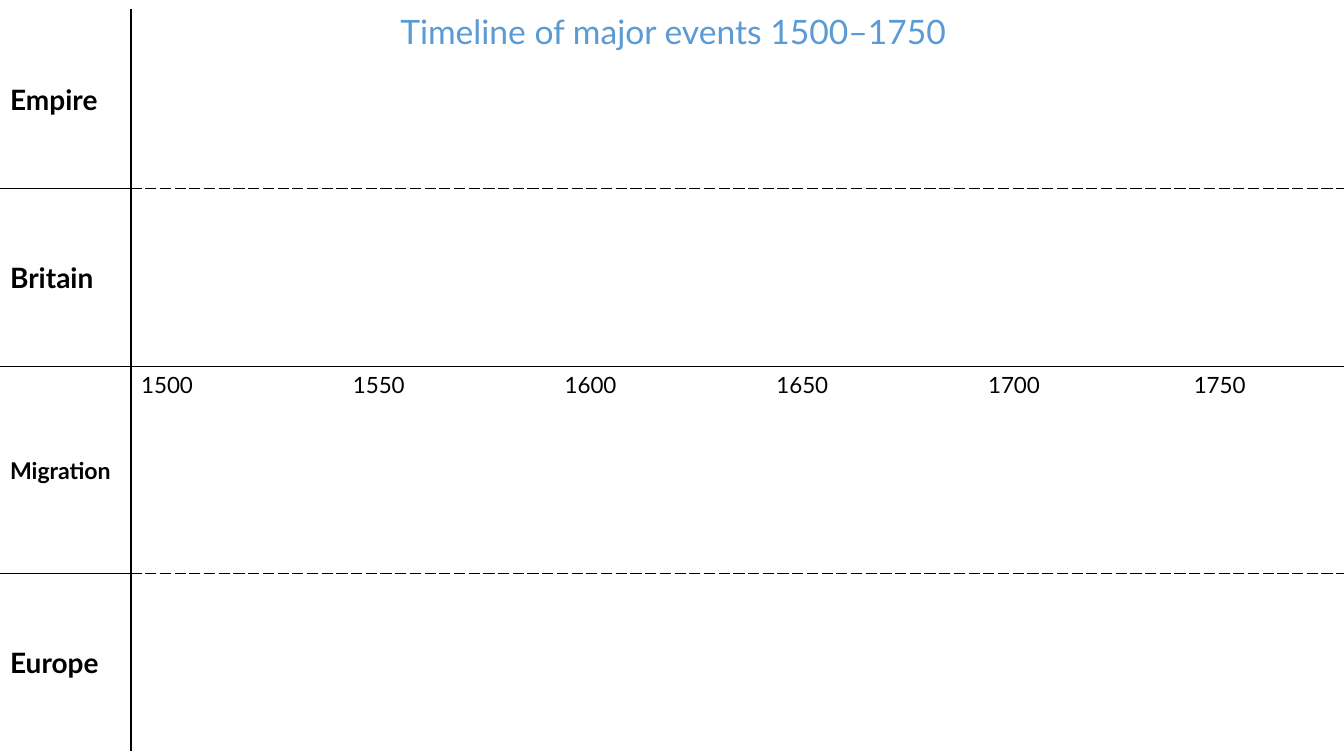
import pptx
import pptx.dml.color
import pptx.enum.text
import pptx.oxml
import pptx.oxml.ns
import pptx.util
from pptx.util import Inches

TITLE = "Timeline of major events 1500–1750"
ROWS = [
    ("Empire", 20, 1.77, "dash"),
    ("Britain", 20, 1.77, "solid"),
    ("Migration", 16.5, 2.05, "dash"),
    ("Europe", 20, 1.77, None),
]
YEARS = ["1500", "1550", "1600", "1650", "1700", "1750"]
YEAR_TABS = [2.1, 4.2, 6.3, 8.4, 10.44]
YEAR_ROW = 2
COLUMN_WIDTHS = [1.3, 12.03]

FONT = "Lato"
BLACK = pptx.dml.color.RGBColor(0x00, 0x00, 0x00)
WHITE = pptx.dml.color.RGBColor(0xFF, 0xFF, 0xFF)
BLUE = pptx.dml.color.RGBColor(0x5B, 0x9B, 0xD5)
MIDDLE = pptx.enum.text.MSO_ANCHOR.MIDDLE


def add_span(para, text, size, color, bold=False):
    span = para.add_run()
    span.text = text
    span.font.name = FONT
    span.font.size = pptx.util.Pt(size)
    span.font.bold = bold
    span.font.color.rgb = color


def set_borders(cell, borders):
    properties = cell._tc.get_or_add_tcPr()
    for position, side in enumerate(side for side in "LRTB" if borders.get(side)):
        line = pptx.oxml.parse_xml(
            f'<a:ln{side} {pptx.oxml.ns.nsdecls("a")} w="12700">'
            f'<a:solidFill><a:srgbClr val="{BLACK}"/></a:solidFill>'
            f'<a:prstDash val="{borders[side]}"/></a:ln{side}>'
        )
        properties.insert(position, line)


def add_tabs(para, stops):
    tabs = pptx.oxml.parse_xml(f'<a:tabLst {pptx.oxml.ns.nsdecls("a")}/>')
    for stop in stops:
        tab = tabs.makeelement(pptx.oxml.ns.qn("a:tab"), {"pos": str(Inches(stop)), "algn": "l"})
        tabs.append(tab)
    para._p.get_or_add_pPr().append(tabs)


def add_timeline(page):
    height = sum(row[2] for row in ROWS)
    frame = page.shapes.add_table(
        len(ROWS), 2, 0, Inches(0.1), Inches(sum(COLUMN_WIDTHS)), Inches(height)
    )
    table = frame.table
    table.first_row = False
    table.horz_banding = False
    for column, width in zip(table.columns, COLUMN_WIDTHS):
        column.width = Inches(width)

    above = None
    for index, (label, size, row_height, below) in enumerate(ROWS):
        table.rows[index].height = Inches(row_height)
        heading, events = table.cell(index, 0), table.cell(index, 1)
        for cell in (heading, events):
            cell.fill.solid()
            cell.fill.fore_color.rgb = WHITE
        set_borders(heading, {"R": "solid", "T": above and "solid", "B": below and "solid"})
        set_borders(events, {"L": "solid", "T": above, "B": below})
        heading.vertical_anchor = MIDDLE
        add_span(heading.text_frame.paragraphs[0], label, size, BLACK, True)
        above = below

    year_para = table.cell(YEAR_ROW, 1).text_frame.paragraphs[0]
    add_tabs(year_para, YEAR_TABS)
    add_span(year_para, "\t".join(YEARS), 16, BLACK)


def add_title(page):
    box = page.shapes.add_textbox(Inches(1.3), Inches(-0.03), Inches(10.75), Inches(0.72))
    box.text_frame.word_wrap = True
    box.text_frame.vertical_anchor = MIDDLE
    para = box.text_frame.paragraphs[0]
    para.alignment = pptx.enum.text.PP_ALIGN.CENTER
    para.line_spacing = 0.9
    add_span(para, TITLE, 24, BLUE)


def main():
    deck = pptx.Presentation()
    deck.slide_width = Inches(13.33)
    deck.slide_height = Inches(7.5)
    page = deck.slides.add_slide(deck.slide_layouts[6])
    add_timeline(page)
    add_title(page)
    deck.save("out.pptx")


if __name__ == "__main__":
    main()
